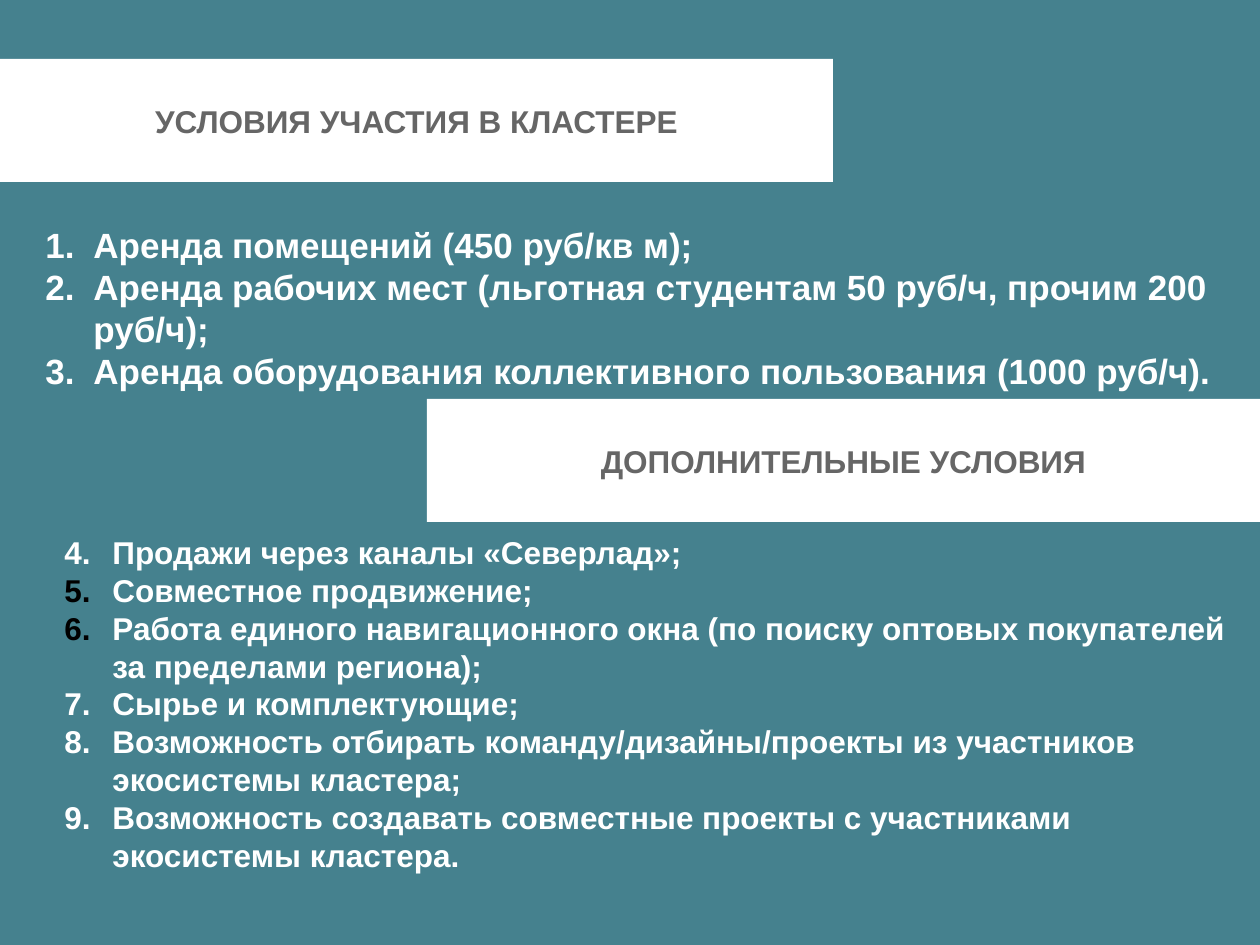
"""Build the slide on the terms of joining the cluster."""
from lxml import etree
from pptx import Presentation
from pptx import util as u
from pptx.dml.color import RGBColor
from pptx.enum import shapes, text
from pptx.oxml import ns

SCALE = 914400 / 126
INDENT = 48
TEAL, WHITE, GREY, BLACK = "45818E", "FFFFFF", "666666", "000000"


def px(*lengths):
    return [u.Emu(round(length * SCALE)) for length in lengths]


def paint(color_format, color):
    color_format.rgb = RGBColor.from_string(color)


presentation = Presentation()
presentation.slide_width, presentation.slide_height = px(1260, 945)
slide = presentation.slides.add_slide(presentation.slide_layouts[6])

panels = [
    ((0, 0, 1260, 945), TEAL, ""),
    ((0, 59, 833, 123), WHITE, "УСЛОВИЯ УЧАСТИЯ В КЛАСТЕРЕ"),
    ((427, 399, 833, 123), WHITE, "ДОПОЛНИТЕЛЬНЫЕ УСЛОВИЯ"),
]
for box, color, title in panels:
    panel = slide.shapes.add_shape(shapes.MSO_SHAPE.RECTANGLE, *px(*box))
    panel.shadow.inherit = False
    panel.fill.solid()
    paint(panel.fill.fore_color, color)
    panel.line.fill.background()
    if title:
        frame = panel.text_frame
        frame.word_wrap = True
        frame.vertical_anchor = text.MSO_ANCHOR.MIDDLE
        frame.text = title
        paragraph = frame.paragraphs[0]
        paragraph.alignment = text.PP_ALIGN.CENTER
        font = paragraph.runs[0].font
        font.name, font.size, font.bold = "Arial", u.Pt(18), True
        paint(font.color, GREY)

conditions = [
    "1.\tАренда помещений (450 руб/кв м);",
    "2.\tАренда рабочих мест (льготная студентам 50 руб/ч, прочим 200 руб/ч);",
    "3.\tАренда оборудования коллективного пользования (1000 руб/ч).",
]
extras = [
    "4.\tПродажи через каналы «Северлад»;",
    "Совместное продвижение;",
    "Работа единого навигационного окна (по поиску оптовых покупателей за пределами региона);",
    "7.\tСырье и комплектующие;",
    "8.\tВозможность отбирать команду/дизайны/проекты из участников экосистемы кластера;",
    "9.\tВозможность создавать совместные проекты с участниками экосистемы кластера.",
]
lists = [
    ((33, 217, 1227, 182), 20, conditions),
    ((52, 527, 1189, 357), 18, extras),
]
for box, size, items in lists:
    frame = slide.shapes.add_textbox(*px(*box)).text_frame
    frame.word_wrap = True
    frame.auto_size = text.MSO_AUTO_SIZE.SHAPE_TO_FIT_TEXT
    frame.text = "\n".join(items)
    for paragraph in frame.paragraphs:
        font = paragraph.runs[0].font
        font.name, font.size, font.bold = "Arial", u.Pt(size), True
        paint(font.color, WHITE)
        properties = paragraph._p.get_or_add_pPr()
        margin, hanging = px(INDENT, -INDENT)
        properties.set("marL", str(margin))
        properties.set("indent", str(hanging))
        if "\t" not in paragraph.text:
            bullet_color = etree.SubElement(properties, ns.qn("a:buClr"))
            etree.SubElement(bullet_color, ns.qn("a:srgbClr"), val=BLACK)
            etree.SubElement(properties, ns.qn("a:buAutoNum"), type="arabicPeriod", startAt="5")

presentation.save("out.pptx")
